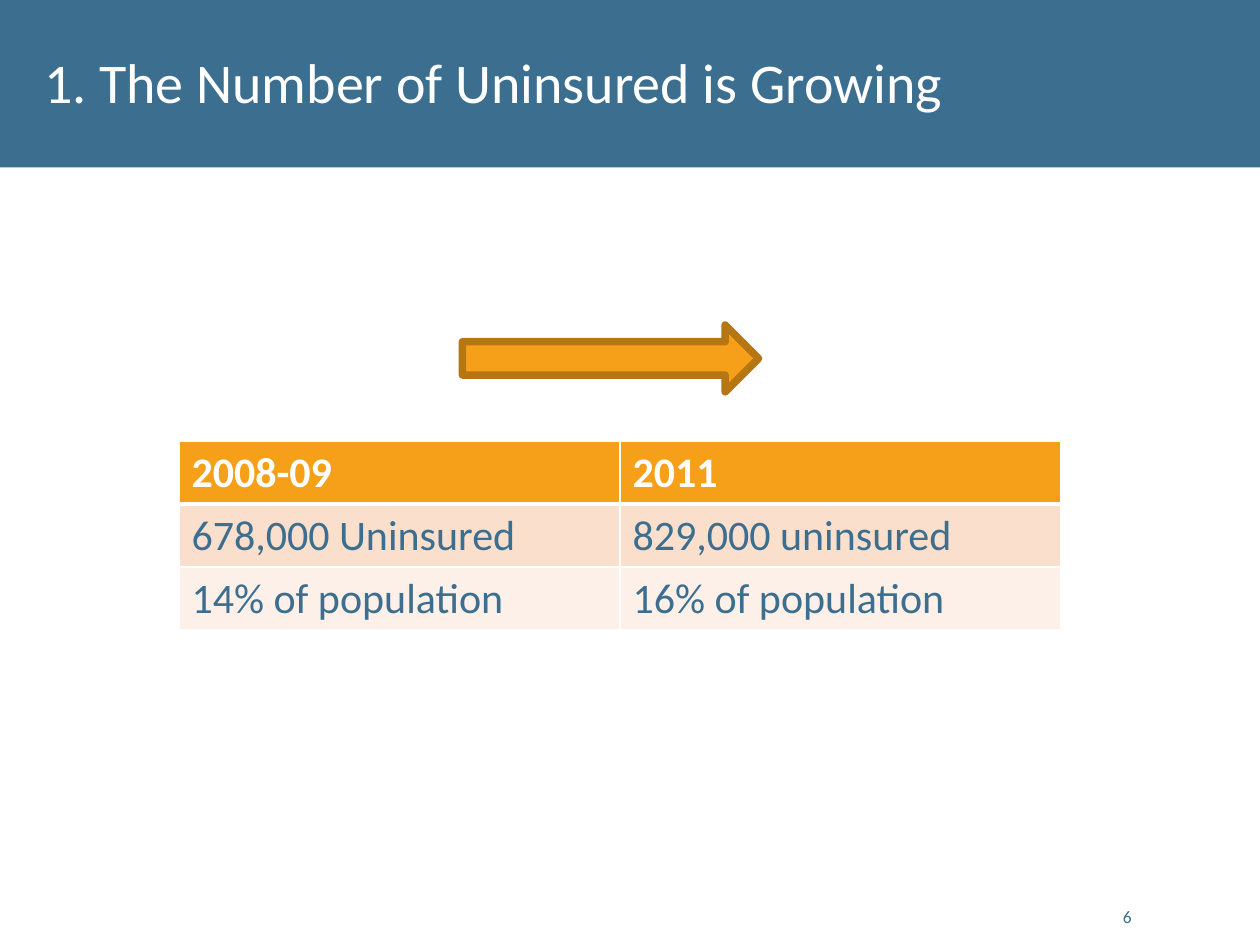
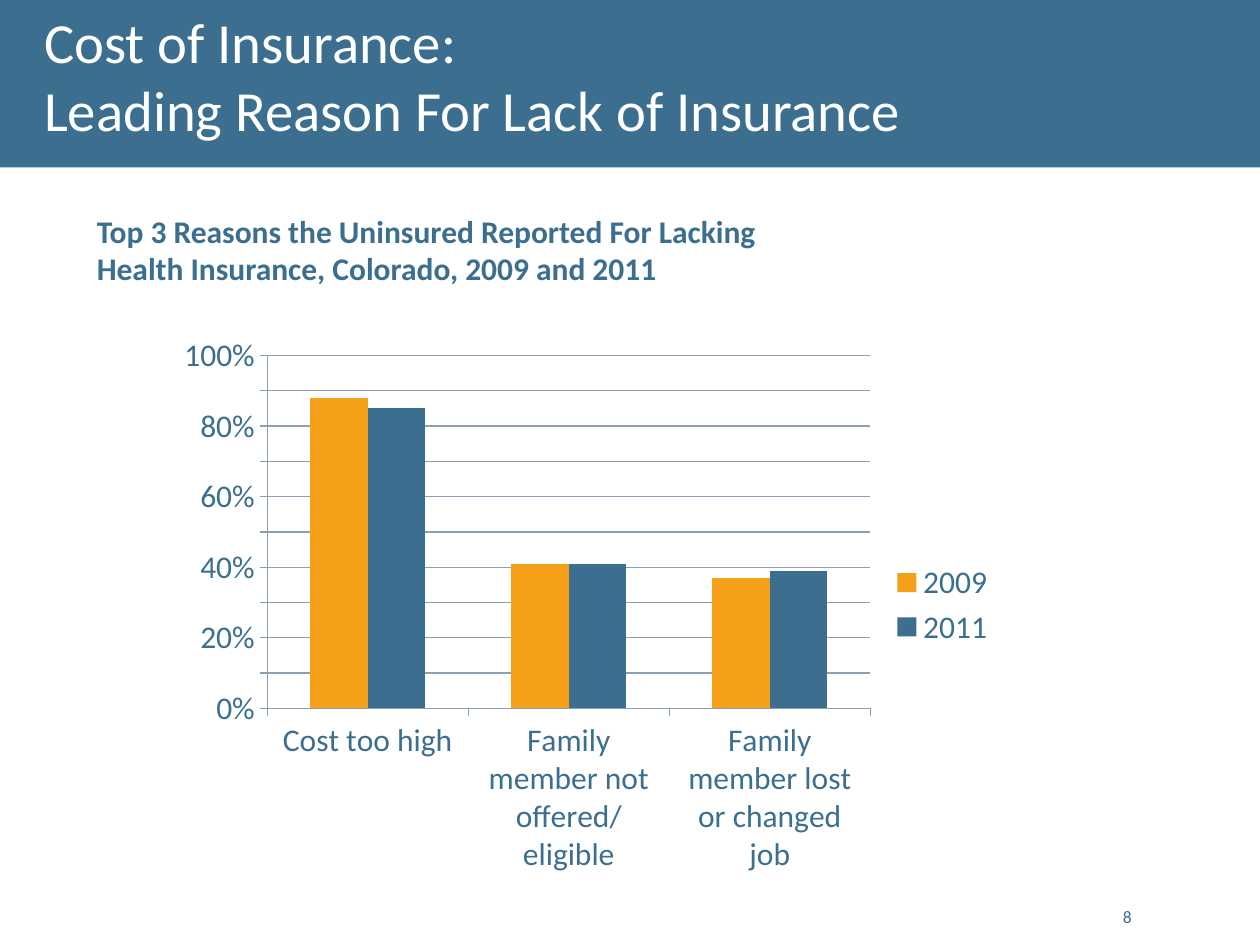
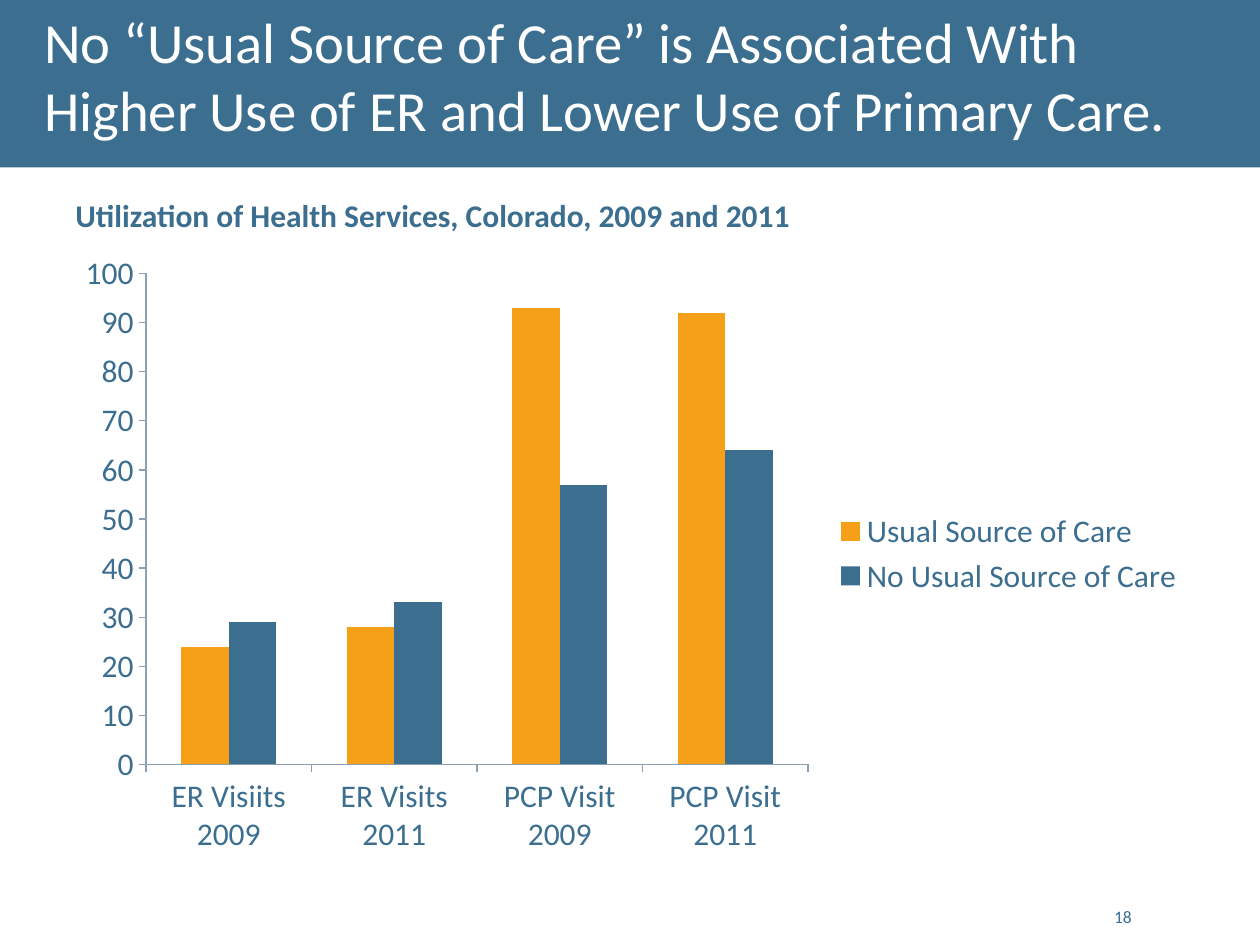
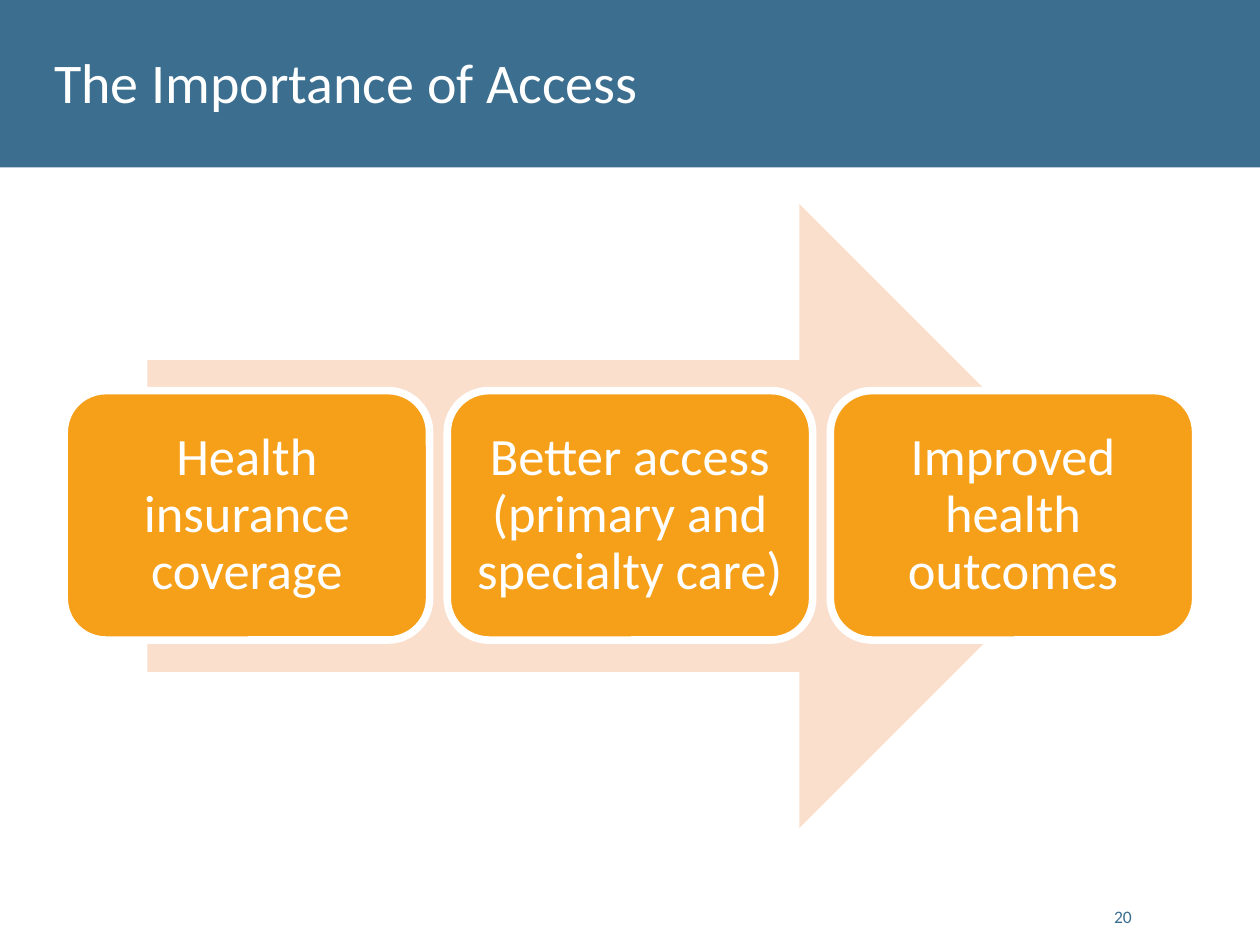
from lxml import etree
from pptx import Presentation
from pptx.chart.data import CategoryChartData
from pptx.dml.color import RGBColor
from pptx.enum import chart as charts, shapes, text
from pptx.oxml.ns import qn
from pptx.util import Inches, Pt

FONT = "Calibri"
COLORS = {
    "blue": "3B6E8F",
    "orange": "F6A01A",
    "dark_orange": "B67613",
    "peach": "FBDFCD",
    "pale_peach": "FDF0E8",
    "axis": "8CA0B4",
    "white": "FFFFFF",
}


def color(name):
    return RGBColor.from_string(COLORS[name])


def style_font(font, size, color_name, bold=False):
    font.name = FONT
    font.size = Pt(size)
    font.bold = bold
    font.color.rgb = color(color_name)


def style_runs(frame, size, color_name, bold=False):
    for paragraph in frame.paragraphs:
        for run in paragraph.runs:
            style_font(run.font, size, color_name, bold)


def add_block(slide, kind, box, fill, line=None, line_width=4.33):
    """Preset shape with a flat fill and an optional outline."""
    block = slide.shapes.add_shape(kind, *map(Inches, box))
    block.shadow.inherit = False
    block.fill.solid()
    block.fill.fore_color.rgb = color(fill)
    if line:
        block.line.color.rgb = color(line)
        block.line.width = Pt(line_width)
    else:
        block.line.fill.background()
    return block


def add_label(slide, wording, box, size, bold=False, wrap=True):
    label = slide.shapes.add_textbox(*map(Inches, box))
    frame = label.text_frame
    frame.word_wrap = wrap
    frame.text = wording
    style_runs(frame, size, "blue", bold)
    return frame


def add_band(prs, layout):
    """Title band, built once and placed behind everything on the layout."""
    slide = prs.slides.add_slide(layout)
    band = add_block(slide, shapes.MSO_SHAPE.RECTANGLE, (0, 0, 10, 1.33), "blue")
    layout.shapes._spTree.insert(2, band._element)
    return slide


def fill_frame(slide, heading, number, box, size=32):
    """Title and page number."""
    title = slide.shapes.title
    title.left, title.top, title.width, title.height = map(Inches, box)
    frame = title.text_frame
    frame.text = heading
    frame.word_wrap = True
    frame.auto_size = text.MSO_AUTO_SIZE.NONE
    frame.vertical_anchor = text.MSO_ANCHOR.TOP
    for paragraph in frame.paragraphs:
        paragraph.alignment = text.PP_ALIGN.LEFT
    style_runs(frame, size, "white")

    page = add_label(slide, str(number), (8.68, 7.01, 0.4, 0.4), 10)
    page.vertical_anchor = text.MSO_ANCHOR.BOTTOM
    page.paragraphs[0].alignment = text.PP_ALIGN.RIGHT


def set_borders(cell, bottom):
    """White cell borders; they must precede the fill in the cell properties."""
    props = cell._tc.get_or_add_tcPr()
    for position, side in enumerate(("lnL", "lnR", "lnT", "lnB")):
        line = etree.Element(qn(f"a:{side}"))
        line.set("w", str(Pt(bottom if side == "lnB" else 1)))
        solid = etree.SubElement(line, qn("a:solidFill"))
        etree.SubElement(solid, qn("a:srgbClr")).set("val", COLORS["white"])
        props.insert(position, line)


def add_grid(slide, rows, box, fills):
    grid = slide.shapes.add_table(len(rows), len(rows[0]), *map(Inches, box)).table
    for r, (row, fill) in enumerate(zip(rows, fills)):
        header = r == 0
        for c, wording in enumerate(row):
            cell = grid.cell(r, c)
            cell.text = wording
            style_runs(cell.text_frame, 24, "white" if header else "blue", header)
            cell.fill.solid()
            cell.fill.fore_color.rgb = color(fill)
            set_borders(cell, 3 if header or False else 1)


def add_columns(slide, box, categories, series, top, step, number_format, grid):
    """Clustered columns with the legend at the right."""
    data = CategoryChartData(number_format=number_format)
    data.categories = categories
    for name, values in series:
        data.add_series(name, values)
    chart = slide.shapes.add_chart(
        charts.XL_CHART_TYPE.COLUMN_CLUSTERED, *map(Inches, box), data).chart
    style_font(chart.font, 18, "blue")
    chart.has_title = False
    chart.has_legend = True
    chart.legend.position = charts.XL_LEGEND_POSITION.RIGHT
    chart.legend.include_in_layout = False

    plot = chart.plots[0]
    plot.gap_width = 150
    plot.overlap = 0
    plot.vary_by_categories = False
    for bars, fill in zip(plot.series, ("orange", "blue")):
        bars.format.fill.solid()
        bars.format.fill.fore_color.rgb = color(fill)

    for axis in (chart.category_axis, chart.value_axis):
        axis.major_tick_mark = charts.XL_TICK_MARK.OUTSIDE
        axis.format.line.color.rgb = color("axis")
    scale = chart.value_axis
    scale.minimum_scale, scale.maximum_scale, scale.major_unit = 0, top, step
    scale.tick_labels.number_format = number_format
    scale.tick_labels.number_format_is_linked = False
    scale.has_major_gridlines = grid
    if grid:
        scale.major_gridlines.format.line.color.rgb = color("axis")


def add_step(slide, wording, left):
    step = add_block(slide, shapes.MSO_SHAPE.ROUNDED_RECTANGLE,
                     (left, 3.1, 2.9, 1.98), "orange", "white")
    frame = step.text_frame
    frame.word_wrap = True
    frame.vertical_anchor = text.MSO_ANCHOR.MIDDLE
    frame.margin_left = frame.margin_right = Inches(0.05)
    frame.text = wording
    frame.paragraphs[0].alignment = text.PP_ALIGN.CENTER
    frame.paragraphs[0].line_spacing = 0.9
    style_runs(frame, 30, "white")


def main():
    prs = Presentation()
    prs.slide_width, prs.slide_height = Inches(10), Inches(7.5)
    layout = prs.slide_layouts[5]

    # Growth in the uninsured
    growth = add_band(prs, layout)
    fill_frame(growth, "1. The Number of Uninsured is Growing", 6,
               (0.25, 0.33, 9.5, 0.75))
    add_grid(growth,
             [("2008-09", "2011"),
              ("678,000 Uninsured", "829,000 uninsured"),
              ("14% of population", "16% of population")],
             (1.42, 3.5, 7, 1.5), ("orange", "peach", "pale_peach"))
    trend = add_block(growth, shapes.MSO_SHAPE.UP_ARROW,
                      (4.58, 1.67, 0.53, 2.35), "orange", "dark_orange")
    trend.rotation = 90

    # Reasons for lacking insurance
    reasons = prs.slides.add_slide(layout)
    fill_frame(reasons, "Cost of Insurance: \vLeading Reason For Lack of Insurance", 8,
               (0.25, 0, 9, 0.75), 32.4)
    add_label(reasons, "Top 3 Reasons the Uninsured Reported For Lacking "
              "Health Insurance, Colorado, 2009 and 2011",
              (0.67, 1.63, 6, 0.71), 18, bold=True)
    add_columns(reasons, (1.33, 2.58, 6.67, 4.44),
                ["Cost too high", "Family member not offered/ eligible",
                 "Family member lost or changed job"],
                [("2009", (0.88, 0.41, 0.37)), ("2011", (0.85, 0.41, 0.39))],
                top=1, step=0.1, number_format="0%", grid=True)

    # Use of health services
    usage = prs.slides.add_slide(layout)
    fill_frame(usage, "No “Usual Source of Care” is Associated With \v"
               "Higher Use of ER and Lower Use of Primary Care.", 18,
               (0.25, 0, 9.5, 0.75), 32.4)
    add_label(usage, "Utilization of Health Services, Colorado, 2009 and 2011",
              (0.5, 1.51, 6.34, 0.4), 18, bold=True, wrap=False)
    add_columns(usage, (0.5, 1.92, 9, 4.95),
                ["ER Visiits 2009", "ER Visits 2011", "PCP Visit 2009", "PCP Visit 2011"],
                [("Usual Source of Care", (24, 28, 93, 92)),
                 ("No Usual Source of Care", (29, 33, 57, 64))],
                top=100, step=10, number_format="General", grid=False)

    # From coverage to outcomes
    access = prs.slides.add_slide(layout)
    fill_frame(access, "The Importance of Access", 20, (0.33, 0.33, 9.67, 0.75))
    add_block(access, shapes.MSO_SHAPE.RIGHT_ARROW, (1.17, 1.62, 7.65, 4.95), "peach")
    steps = ("Health insurance coverage",
             "Better access (primary and specialty care)",
             "Improved health outcomes")
    for i, wording in enumerate(steps):
        add_step(access, wording, 0.51 + 3.04 * i)

    prs.save("out.pptx")


if __name__ == "__main__":
    main()
